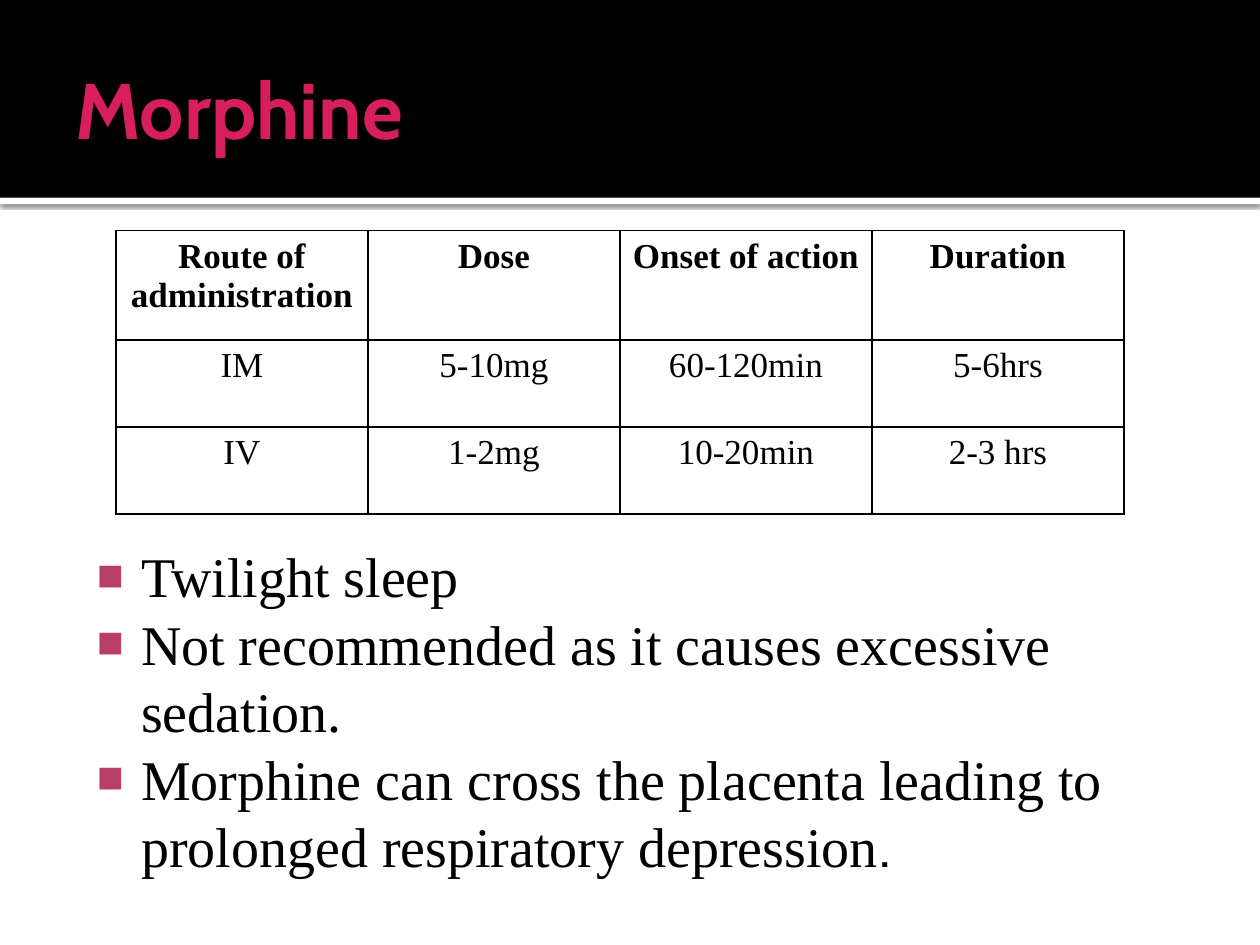
from lxml import etree
from pptx import Presentation
from pptx.dml.color import RGBColor
from pptx.enum.shapes import MSO_SHAPE
from pptx.enum.text import MSO_ANCHOR, PP_ALIGN
from pptx.oxml import parse_xml
from pptx.oxml.ns import nsdecls, qn
from pptx.util import Inches, Pt

BLACK = RGBColor(0x00, 0x00, 0x00)
WHITE = RGBColor(0xFF, 0xFF, 0xFF)
PINK = RGBColor(0xD7, 0x1E, 0x5F)
BULLET_ROSE = RGBColor(0xB8, 0x3D, 0x68)
HEADING_FONT = "Cabin"
BODY_FONT = "Times New Roman"
RECTANGLE = MSO_SHAPE.RECTANGLE
CENTER = PP_ALIGN.CENTER
TOP = MSO_ANCHOR.TOP
MIDDLE = MSO_ANCHOR.MIDDLE
BORDER_SIDES = ("a:lnL", "a:lnR", "a:lnT", "a:lnB")

DOSING = [
    ["Route of administration", "Dose", "Onset of action", "Duration"],
    ["IM", "5-10mg", "60-120min", "5-6hrs"],
    ["IV", "1-2mg", "10-20min", "2-3 hrs"],
]
ROW_HEIGHTS = [0.87, 0.69, 0.69]
NOTES = [
    [("Twilight sleep", BODY_FONT)],
    [("Not recommended as it causes excessive sedation.", BODY_FONT)],
    [
        ("Morphine can cross the placenta leading to prolonged respiratory depression", BODY_FONT),
        (".", HEADING_FONT),
    ],
]


def style_span(span, font, size, color, bold=False):
    """Set the font, size, colour and weight of a run."""
    span.font.name = font
    span.font.size = Pt(size)
    span.font.color.rgb = color
    span.font.bold = bold


def add_band(page, top, height, color):
    """Add a full-width band without a line."""
    band = page.shapes.add_shape(RECTANGLE, 0, Inches(top), Inches(10), Inches(height))
    band.shadow.inherit = False
    band.fill.solid()
    band.fill.fore_color.rgb = color
    band.line.fill.background()
    return band


def add_drop_shadow(shape):
    """Give a shape a soft shadow straight below it."""
    effects = shape._element.spPr.find(qn("a:effectLst"))
    effects.append(parse_xml(
        f'<a:outerShdw {nsdecls("a")} blurRad="{Pt(2.5)}" dist="{Pt(0.8)}" dir="5400000">'
        f'<a:srgbClr val="{BLACK}"><a:alpha val="60000"/></a:srgbClr></a:outerShdw>'
    ))


def add_text_box(page, place, insets, anchor):
    """Add a wrapping text box and return its text frame."""
    box = page.shapes.add_textbox(*[Inches(length) for length in place])
    frame = box.text_frame
    frame.word_wrap = True
    frame.vertical_anchor = anchor
    frame.margin_left, frame.margin_top, frame.margin_right, frame.margin_bottom = [
        Inches(inset) for inset in insets
    ]
    return frame


def add_title(page, text):
    """Add the heading over the dark band."""
    frame = add_text_box(page, (0.5, 0.17, 9, 1.37), (0.1, 0.05, 0.05, 0.05), MIDDLE)
    frame.text = text
    style_span(frame.paragraphs[0].runs[0], HEADING_FONT, 45, PINK, True)


def set_borders(cell):
    """Draw a thin black line on every side of a cell."""
    properties = cell._tc.get_or_add_tcPr()
    for index, side in enumerate(BORDER_SIDES):
        properties.insert(index, parse_xml(
            f'<{side} {nsdecls("a")} w="{Pt(1)}"><a:solidFill>'
            f'<a:srgbClr val="{BLACK}"/></a:solidFill></{side}>'
        ))


def add_dosing_table(page):
    """Add the table of routes, doses and times."""
    table = page.shapes.add_table(
        len(DOSING), len(DOSING[0]), Inches(0.92), Inches(1.83), Inches(8), Inches(sum(ROW_HEIGHTS))
    ).table
    table.horz_banding = False
    for row_index, values in enumerate(DOSING):
        table.rows[row_index].height = Inches(ROW_HEIGHTS[row_index])
        for column_index, value in enumerate(values):
            cell = table.cell(row_index, column_index)
            cell.fill.background()
            set_borders(cell)
            cell.text = value
            para = cell.text_frame.paragraphs[0]
            para.alignment = CENTER
            style_span(para.runs[0], BODY_FONT, 20, BLACK, row_index == 0)


def set_bullet(para):
    """Give a paragraph a square bullet with a hanging indent."""
    properties = para._p.get_or_add_pPr()
    properties.set("marL", str(Inches(0.48)))
    properties.set("indent", str(Inches(-0.35)))
    color = etree.SubElement(properties, qn("a:buClr"))
    etree.SubElement(color, qn("a:srgbClr"), val=str(BULLET_ROSE))
    etree.SubElement(properties, qn("a:buSzPct"), val="80000")
    etree.SubElement(properties, qn("a:buFont"), typeface=BODY_FONT)
    etree.SubElement(properties, qn("a:buChar"), char="■")


def add_notes(page):
    """Add the bulleted remarks below the table."""
    frame = add_text_box(page, (0.58, 4.2, 9, 3.05), (0.06, 0.1, 0.1, 0.05), TOP)
    for index, pieces in enumerate(NOTES):
        para = frame.add_paragraph() if index else frame.paragraphs[0]
        para.line_spacing = Pt(38.5)
        set_bullet(para)
        for text, font in pieces:
            span = para.add_run()
            span.text = text
            style_span(span, font, 32, BLACK)


def main():
    """Build the slide and save the deck."""
    deck = Presentation()
    deck.slide_width = Inches(10)
    deck.slide_height = Inches(7.5)
    page = deck.slides.add_slide(deck.slide_layouts[6])
    add_drop_shadow(add_band(page, 1.57, 0.05, WHITE))
    add_band(page, 0, 1.57, BLACK)
    add_title(page, "Morphine")
    add_notes(page)
    add_dosing_table(page)
    deck.save("out.pptx")


if __name__ == "__main__":
    main()
